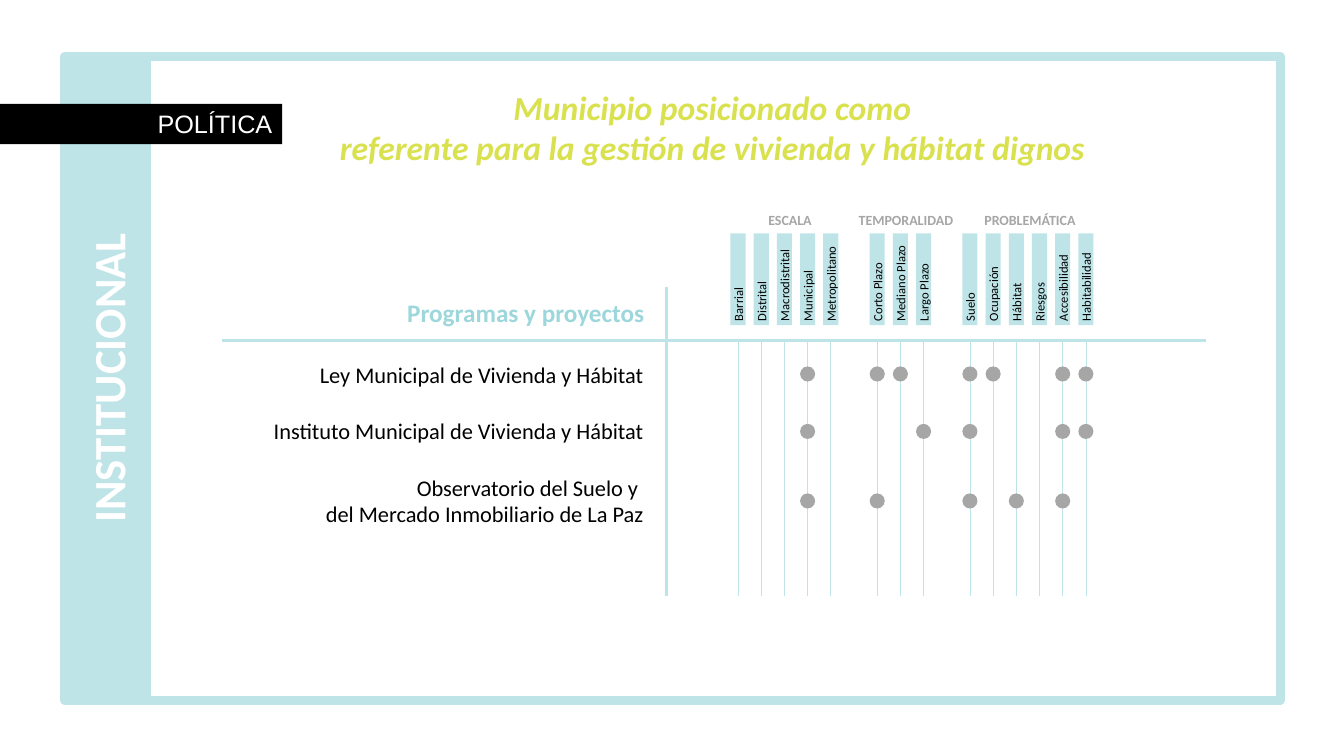
import pptx
import pptx.dml.color
import pptx.enum.shapes
import pptx.enum.text
import pptx.oxml
import pptx.oxml.ns
import pptx.util
from dataclasses import dataclass

Inches = pptx.util.Inches
Pt = pptx.util.Pt
SHAPE = pptx.enum.shapes.MSO_SHAPE
ALIGN = pptx.enum.text.PP_ALIGN
ANCHOR = pptx.enum.text.MSO_ANCHOR


@dataclass(frozen=True)
class Theme:
    font: str = "Calibri"
    tag_font: str = "Arial"
    aqua: str = "BEE4E7"
    teal: str = "9DD7DB"
    lime: str = "D9E14F"
    gray: str = "A6A6A6"
    white: str = "FFFFFF"
    black: str = "000000"
    section_size: int = 32
    title_size: int = 24
    heading_size: int = 18
    body_size: int = 16
    group_size: int = 10
    label_size: int = 9


class Deck:
    def __init__(self, theme):
        self.theme = theme
        self.prs = pptx.Presentation()
        self.prs.slide_width = Inches(13.33)
        self.prs.slide_height = Inches(7.5)
        self.slide = self.prs.slides.add_slide(self.prs.slide_layouts[6])

    def color(self, value):
        return pptx.dml.color.RGBColor.from_string(value)

    def shape(self, kind, x, y, w, h, fill, border=None):
        sp = self.slide.shapes.add_shape(kind, Inches(x), Inches(y), Inches(w), Inches(h))
        sp.shadow.inherit = False
        sp.fill.solid()
        sp.fill.fore_color.rgb = self.color(fill)
        if border:
            sp.line.color.rgb = self.color(border)
            sp.line.width = Pt(6)
        else:
            sp.line.fill.background()
        return sp

    def line(self, x1, y1, x2, y2, width):
        cx = self.slide.shapes.add_connector(
            pptx.enum.shapes.MSO_CONNECTOR.STRAIGHT,
            Inches(x1), Inches(y1), Inches(x2), Inches(y2))
        cx.line.color.rgb = self.color(self.theme.aqua)
        cx.line.width = Pt(width)
        cx._element.spPr.append(pptx.oxml.parse_xml(
            "<a:effectLst %s/>" % pptx.oxml.ns.nsdecls("a")))

    def add_lines(self, sp, lines, size, color, align, bold=False, italic=False,
                  font=None, tight=False):
        tf = sp.text_frame
        tf.word_wrap = True
        tf.vertical_anchor = ANCHOR.TOP
        if tight:
            tf.vertical_anchor = ANCHOR.MIDDLE
            tf.margin_left = Inches(0.04)
            tf.margin_right = tf.margin_top = tf.margin_bottom = 0
        for i, text in enumerate(lines):
            p = tf.paragraphs[0] if i == 0 else tf.add_paragraph()
            p.alignment = align
            r = p.add_run()
            r.text = text
            r.font.name = font or self.theme.font
            r.font.size = Pt(size)
            r.font.bold = bold
            r.font.italic = italic
            r.font.color.rgb = self.color(color)

    def text(self, x, y, w, h, lines, size, color, align, **style):
        sp = self.slide.shapes.add_textbox(Inches(x), Inches(y), Inches(w), Inches(h))
        self.add_lines(sp, lines, size, color, align, **style)
        return sp

    def label(self, cx, cy, text):
        w, h = 0.91, 0.15
        sp = self.shape(SHAPE.RECTANGLE, cx - w / 2, cy - h / 2, w, h, self.theme.aqua)
        sp.rotation = 270
        self.add_lines(sp, [text], self.theme.label_size, self.theme.black, ALIGN.LEFT,
                       tight=True)

    def dot(self, cx, cy):
        d = 0.15
        self.shape(SHAPE.OVAL, cx - d / 2, cy - d / 2, d, d, self.theme.gray)


# Criteria: heading, heading left and width, first column slot, labels
FIRST_X, PITCH = 7.32, 0.23
GROUPS = [
    ("ESCALA", 7.36, 0.91, 0,
     ["Barrial", "Distrital", "Macrodistrital", "Municipal", "Metropolitano"]),
    ("TEMPORALIDAD", 8.43, 1.07, 6, ["Corto Plazo", "Mediano Plazo", "Largo Plazo"]),
    ("PROBLEMÁTICA", 9.66, 1.07, 10,
     ["Suelo", "Ocupación", "Hábitat", "Riesgos", "Accesibilidad", "Habitabilidad"]),
]
# Projects: text top, height, dot centre, lines, criteria met
PROJECTS = [
    (3.53, 0.37, 3.71, ["Ley Municipal de Vivienda y Hábitat"],
     ["Municipal", "Corto Plazo", "Mediano Plazo", "Suelo", "Ocupación",
      "Accesibilidad", "Habitabilidad"]),
    (4.09, 0.37, 4.28, ["Instituto Municipal de Vivienda y Hábitat"],
     ["Municipal", "Largo Plazo", "Suelo", "Accesibilidad", "Habitabilidad"]),
    (4.65, 0.64, 4.97, ["Observatorio del Suelo y ", "del Mercado Inmobiliario de La Paz"],
     ["Municipal", "Corto Plazo", "Suelo", "Hábitat", "Accesibilidad"]),
]
AXIS_Y, BOTTOM_Y = 3.38, 5.91


def main():
    t = Theme()
    s = Deck(t)

    # Frame
    s.shape(SHAPE.RECTANGLE, 0.64, 0.56, 12.05, 6.39, t.aqua, border=t.aqua)
    s.shape(SHAPE.RECTANGLE, 1.46, 0.56, 11.24, 6.39, t.white, border=t.aqua)

    # Column guides
    columns = {name: FIRST_X + PITCH * (slot + i)
               for _, _, _, slot, names in GROUPS for i, name in enumerate(names)}
    for x in columns.values():
        s.line(x, AXIS_Y, x, BOTTOM_Y, 0.5)

    # Title and axes
    s.text(1.54, 0.81, 11.05, 0.91,
           ["Municipio posicionado como",
            "referente para la gestión de vivienda y hábitat dignos"],
           t.title_size, t.lime, ALIGN.CENTER, bold=True, italic=True)
    s.line(2.2, AXIS_Y, 11.96, AXIS_Y, 2.25)
    s.line(6.61, 2.85, 6.61, BOTTOM_Y, 2.25)

    # Criteria headings and labels
    for heading, x, w, _, _ in GROUPS:
        s.text(x, 2.1, w, 0.17, [heading], t.group_size, t.gray, ALIGN.CENTER,
               bold=True, tight=True)
    for name, x in columns.items():
        s.label(x, 2.77, name)

    # Projects with their dots
    s.text(0.97, 2.9, 5.52, 0.4, ["Programas y proyectos"],
           t.heading_size, t.teal, ALIGN.RIGHT, bold=True)
    for y, h, dot_y, lines, met in PROJECTS:
        s.text(0.97, y, 5.51, h, lines, t.body_size, t.black, ALIGN.RIGHT)
        for name in met:
            s.dot(columns[name], dot_y)

    # Section name and policy tag
    sp = s.text(-2.68, 3.43, 7.5, 0.64, ["INSTITUCIONAL"],
                t.section_size, t.white, ALIGN.CENTER, bold=True)
    sp.rotation = 270
    sp = s.shape(SHAPE.RECTANGLE, 0, 1.03, 2.8, 0.4, t.black)
    s.add_lines(sp, ["POLÍTICA"], t.heading_size, t.white, ALIGN.RIGHT, font=t.tag_font)

    s.prs.save("out.pptx")


if __name__ == "__main__":
    main()
